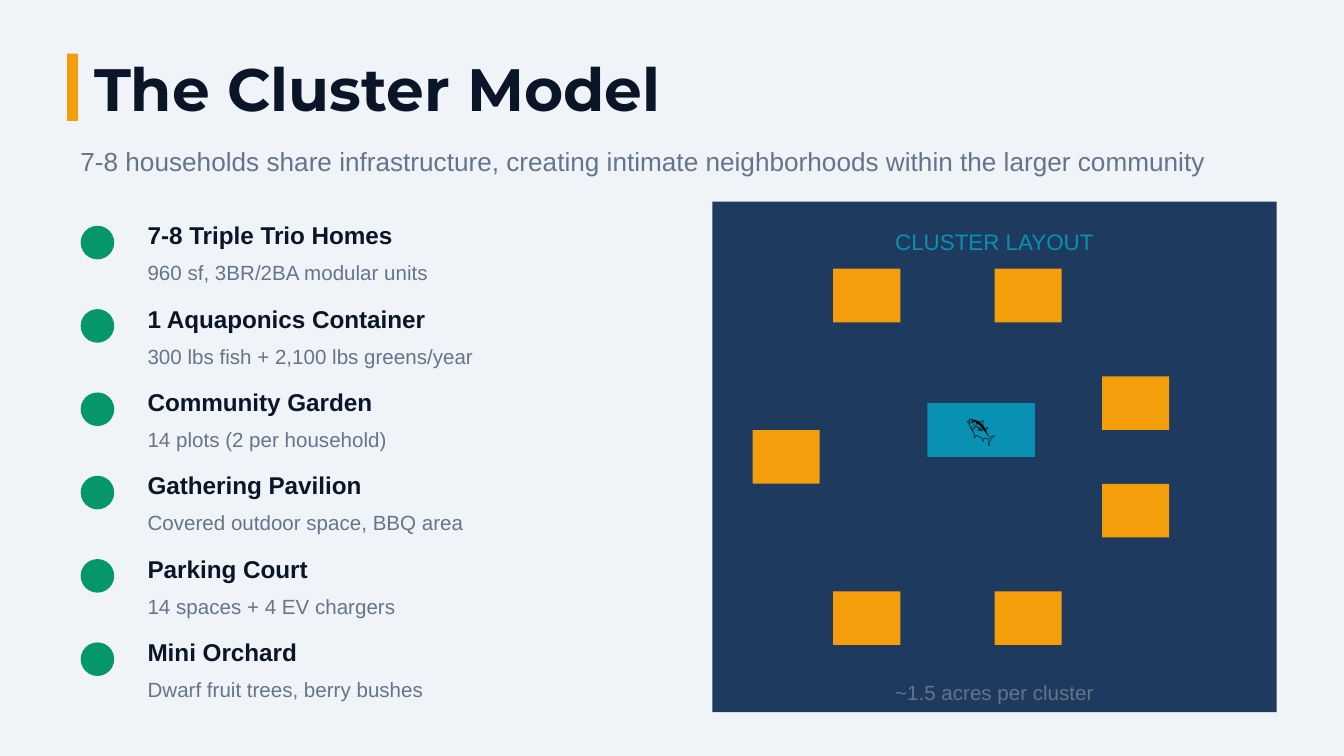
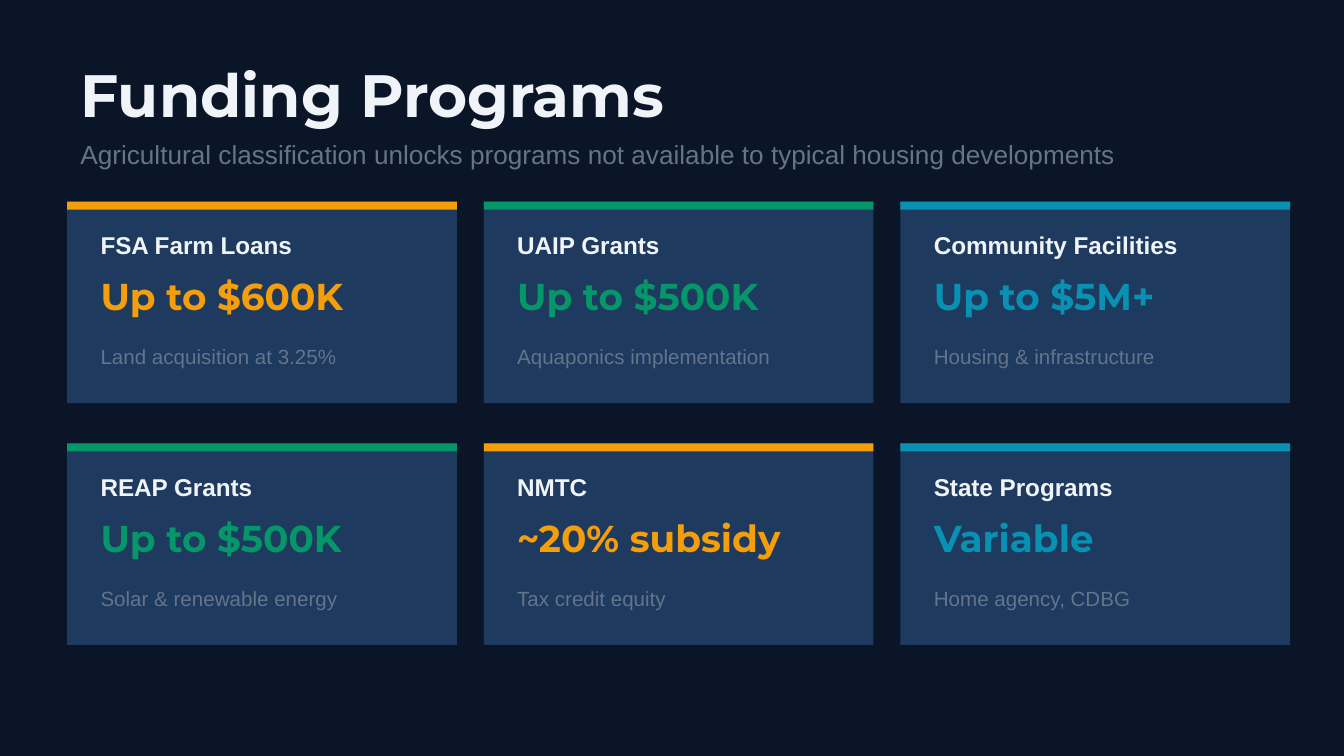
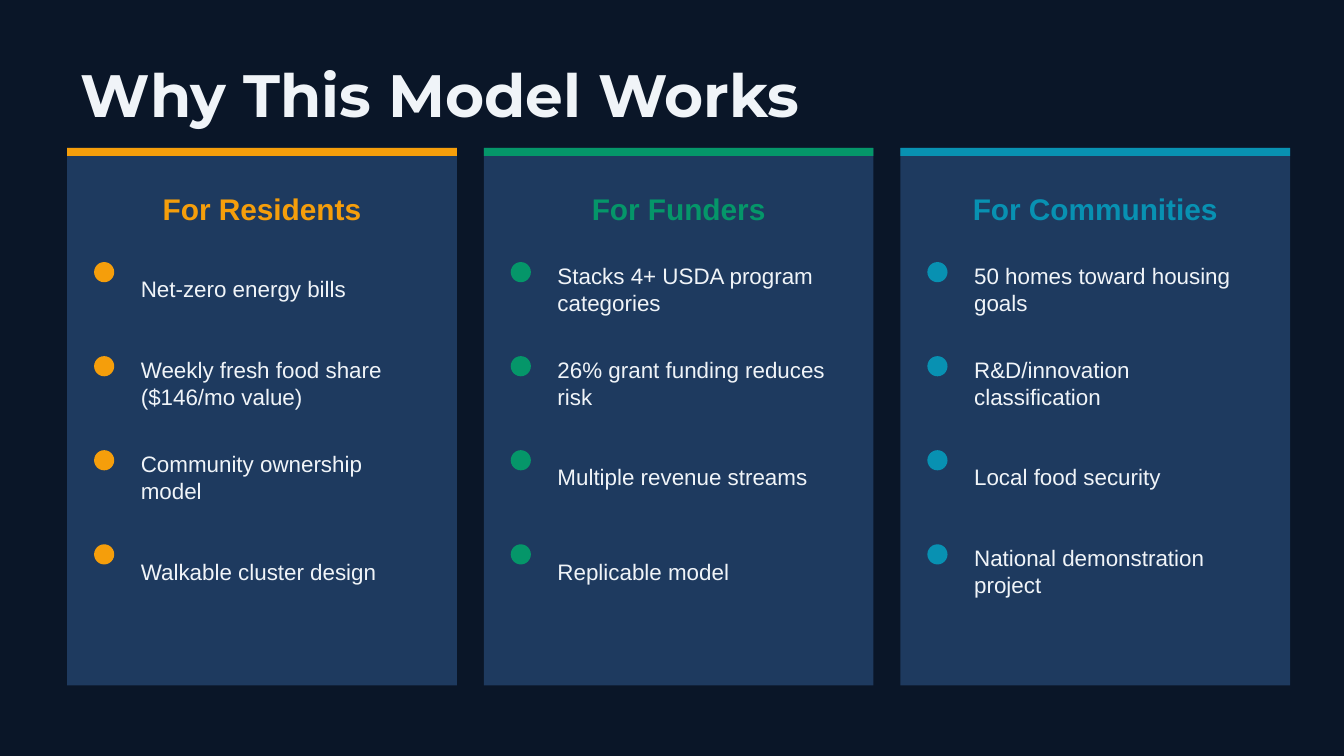
from dataclasses import dataclass

from pptx import Presentation
from pptx import util as u
from pptx.dml import color
from pptx.enum import shapes, text

INK = "0A1628"
PAPER = "F0F4F8"
NAVY = "1E3A5F"
GREY = "64748B"
AMBER = "F59E0B"
GREEN = "059669"
TEAL = "0891B2"

RECTANGLE = shapes.MSO_SHAPE.RECTANGLE
OVAL = shapes.MSO_SHAPE.OVAL
LEFT = text.PP_ALIGN.LEFT
CENTER = text.PP_ALIGN.CENTER

MARGIN = 0.5
CARD_WIDTH = 2.9
CARD_PITCH = 3.1
BAND_HEIGHT = 0.06
TITLE_ONLY = 5


@dataclass(frozen=True)
class Box:
    left: float
    top: float
    width: float
    height: float

    def lengths(self) -> tuple:
        return tuple(u.Inches(n) for n in (self.left, self.top, self.width, self.height))


@dataclass(frozen=True)
class Style:
    size: int
    color: str
    bold: bool = False
    name: str = "Arial"
    align: text.PP_ALIGN = LEFT


@dataclass(frozen=True)
class Feature:
    name: str
    detail: str


@dataclass(frozen=True)
class Program:
    name: str
    amount: str
    purpose: str
    accent: str


@dataclass(frozen=True)
class Audience:
    heading: str
    accent: str
    benefits: tuple


TITLE_BOX = Box(MARGIN, 0.4, 9, 0.6)
SUBTITLE = Style(14, GREY)
DETAIL = Style(11, GREY)

FEATURES = (
    Feature("7-8 Triple Trio Homes", "960 sf, 3BR/2BA modular units"),
    Feature("1 Aquaponics Container", "300 lbs fish + 2,100 lbs greens/year"),
    Feature("Community Garden", "14 plots (2 per household)"),
    Feature("Gathering Pavilion", "Covered outdoor space, BBQ area"),
    Feature("Parking Court", "14 spaces + 4 EV chargers"),
    Feature("Mini Orchard", "Dwarf fruit trees, berry bushes"),
)

HOMES = ((6.2, 2), (7.4, 2), (8.2, 2.8), (8.2, 3.6), (7.4, 4.4), (6.2, 4.4), (5.6, 3.2))

PROGRAMS = (
    Program("FSA Farm Loans", "Up to $600K", "Land acquisition at 3.25%", AMBER),
    Program("UAIP Grants", "Up to $500K", "Aquaponics implementation", GREEN),
    Program("Community Facilities", "Up to $5M+", "Housing & infrastructure", TEAL),
    Program("REAP Grants", "Up to $500K", "Solar & renewable energy", GREEN),
    Program("NMTC", "~20% subsidy", "Tax credit equity", AMBER),
    Program("State Programs", "Variable", "Home agency, CDBG", TEAL),
)

AUDIENCES = (
    Audience("For Residents", AMBER, (
        "Net-zero energy bills",
        "Weekly fresh food share ($146/mo value)",
        "Community ownership model",
        "Walkable cluster design",
    )),
    Audience("For Funders", GREEN, (
        "Stacks 4+ USDA program categories",
        "26% grant funding reduces risk",
        "Multiple revenue streams",
        "Replicable model",
    )),
    Audience("For Communities", TEAL, (
        "50 homes toward housing goals",
        "R&D/innovation classification",
        "Local food security",
        "National demonstration project",
    )),
)


def rgb(value: str) -> color.RGBColor:
    return color.RGBColor.from_string(value)


def write(shape, wording: str, style: Style) -> None:
    frame = shape.text_frame
    frame.text = wording
    frame_format = {
        "word_wrap": True,
        "auto_size": text.MSO_AUTO_SIZE.NONE,
        "vertical_anchor": text.MSO_ANCHOR.MIDDLE,
    }
    for attribute, value in frame_format.items():
        setattr(frame, attribute, value)
    paragraph = frame.paragraphs[0]
    paragraph.alignment = style.align
    font = paragraph.runs[0].font
    font_format = {"size": u.Pt(style.size), "bold": style.bold, "name": style.name}
    for attribute, value in font_format.items():
        setattr(font, attribute, value)
    font.color.rgb = rgb(style.color)


def add_text(slide, box: Box, wording: str, style: Style) -> None:
    write(slide.shapes.add_textbox(*box.lengths()), wording, style)


def add_block(slide, box: Box, fill: str, kind=RECTANGLE) -> None:
    shape = slide.shapes.add_shape(kind, *box.lengths())
    shape.shadow.inherit = False
    shape.fill.solid()
    shape.fill.fore_color.rgb = rgb(fill)
    shape.line.fill.background()


def add_card(slide, box: Box, accent: str) -> None:
    add_block(slide, box, NAVY)
    add_block(slide, Box(box.left, box.top, box.width, BAND_HEIGHT), accent)


def add_titled_slide(presentation, wording: str, background: str, ink: str, box: Box = TITLE_BOX):
    slide = presentation.slides.add_slide(presentation.slide_layouts[TITLE_ONLY])
    slide.background.fill.solid()
    slide.background.fill.fore_color.rgb = rgb(background)
    title = slide.shapes.title
    for attribute, value in zip(("left", "top", "width", "height"), box.lengths()):
        setattr(title, attribute, value)
    write(title, wording, Style(32, ink, True, "Montserrat"))
    return slide


def build_cluster_slide(presentation) -> None:
    slide = add_titled_slide(presentation, "The Cluster Model", PAPER, INK, Box(0.7, 0.35, 8, 0.6))
    for side in ("left", "top", "right", "bottom"):
        setattr(slide.shapes.title.text_frame, f"margin_{side}", 0)
    add_block(slide, Box(MARGIN, 0.4, 0.08, 0.5), AMBER)
    add_text(
        slide, Box(MARGIN, 0.95, 9, 0.5),
        "7-8 households share infrastructure, creating intimate neighborhoods within the larger community",
        SUBTITLE,
    )
    for row, feature in enumerate(FEATURES):
        top = 1.6 + 0.62 * row
        add_block(slide, Box(0.6, top + 0.08, 0.25, 0.25), GREEN, OVAL)
        add_text(slide, Box(1, top, 4, 0.3), feature.name, Style(13, INK, True))
        add_text(slide, Box(1, top + 0.28, 4, 0.3), feature.detail, DETAIL)

    add_block(slide, Box(5.3, 1.5, 4.2, 3.8), NAVY)
    add_text(slide, Box(5.3, 1.6, 4.2, 0.4), "CLUSTER LAYOUT", Style(12, TEAL, align=CENTER))
    add_block(slide, Box(6.9, 3, 0.8, 0.4), TEAL)
    add_text(slide, Box(6.9, 2.95, 0.8, 0.5), "🐟", Style(16, "000000", name="Calibri", align=CENTER))
    for left, top in HOMES:
        add_block(slide, Box(left, top, 0.5, 0.4), AMBER)
    add_text(slide, Box(5.3, 5, 4.2, 0.3), "~1.5 acres per cluster", Style(11, GREY, align=CENTER))


def build_funding_slide(presentation) -> None:
    slide = add_titled_slide(presentation, "Funding Programs", INK, PAPER)
    add_text(
        slide, Box(MARGIN, 0.95, 9, 0.4),
        "Agricultural classification unlocks programs not available to typical housing developments",
        SUBTITLE,
    )
    for index, program in enumerate(PROGRAMS):
        row, column = divmod(index, 3)
        left, top = MARGIN + CARD_PITCH * column, 1.5 + 1.8 * row
        add_card(slide, Box(left, top, CARD_WIDTH, 1.5), program.accent)
        lines = (
            (0.15, 0.35, program.name, Style(13, PAPER, True)),
            (0.5, 0.4, program.amount, Style(20, program.accent, True, "Montserrat")),
            (0.95, 0.4, program.purpose, DETAIL),
        )
        for offset, height, wording, style in lines:
            add_text(slide, Box(left + 0.15, top + offset, 2.6, height), wording, style)


def build_reasons_slide(presentation) -> None:
    slide = add_titled_slide(presentation, "Why This Model Works", INK, PAPER)
    for column, audience in enumerate(AUDIENCES):
        left = MARGIN + CARD_PITCH * column
        add_card(slide, Box(left, 1.1, CARD_WIDTH, 4), audience.accent)
        heading = Style(16, audience.accent, True, align=CENTER)
        add_text(slide, Box(left, 1.3, CARD_WIDTH, 0.5), audience.heading, heading)
        for row, benefit in enumerate(audience.benefits):
            top = 1.85 + 0.7 * row
            add_block(slide, Box(left + 0.2, top + 0.1, 0.15, 0.15), audience.accent, OVAL)
            add_text(slide, Box(left + 0.45, top, 2.3, 0.6), benefit, Style(12, PAPER))


def main() -> None:
    presentation = Presentation()
    presentation.slide_width = u.Inches(10)
    presentation.slide_height = u.Inches(10) * 9 // 16
    build_cluster_slide(presentation)
    build_funding_slide(presentation)
    build_reasons_slide(presentation)
    presentation.save("out.pptx")


if __name__ == "__main__":
    main()
